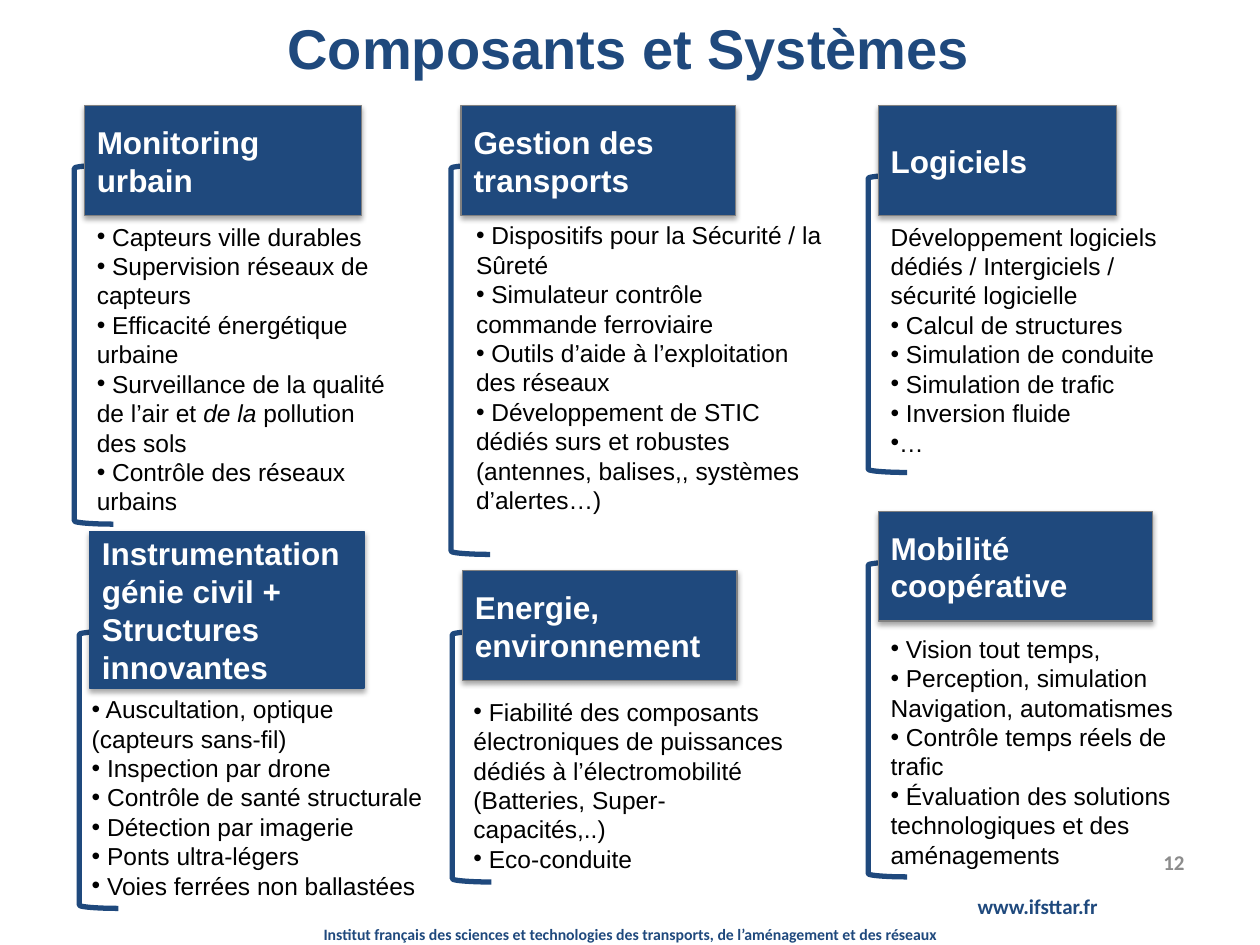
"""Build the slide of components and systems: six headed lists with brackets."""
import lxml.etree
import pptx
import pptx.dml.color
import pptx.enum.shapes
import pptx.enum.text
import pptx.oxml
import pptx.oxml.ns
import pptx.util

NAVY, GREY, WHITE, BLACK = "1F497D", "808080", "FFFFFF", "000000"
SHAPE = pptx.enum.shapes.MSO_SHAPE
ALIGN = pptx.enum.text.PP_ALIGN
MID = pptx.enum.text.MSO_ANCHOR.MIDDLE
TOP = pptx.enum.text.MSO_ANCHOR.TOP
FIT = pptx.enum.text.MSO_AUTO_SIZE.SHAPE_TO_FIT_TEXT
SHADOW = (
    f'<a:effectLst {pptx.oxml.ns.nsdecls("a")}>'
    '<a:outerShdw blurRad="39370" dist="22860" dir="5400000" rotWithShape="0">'
    '<a:srgbClr val="000000"><a:alpha val="35000"/></a:srgbClr>'
    '</a:outerShdw></a:effectLst>'
)

deck = pptx.Presentation()
deck.slide_width = pptx.util.Inches(10)
deck.slide_height = pptx.util.Inches(7.5)
slide = deck.slides.add_slide(deck.slide_layouts[6])
shapes = slide.shapes
col = deck.slide_width / 100
row = deck.slide_height / 75


def tint(code):
    return pptx.dml.color.RGBColor.from_string(code)


def write(shape, lines, size, code, bold=True, face="Arial", align=ALIGN.LEFT, anchor=TOP):
    frame = shape.text_frame
    frame.word_wrap = True
    frame.vertical_anchor = anchor
    frame.text = "\n".join(line.lstrip("•").replace("_", "") for line in lines)
    for para, line in zip(frame.paragraphs, lines):
        para.alignment = align
        if line.startswith("•"):
            props = para._p.get_or_add_pPr()
            props.set("marL", "0")
            props.set("indent", "0")
            font = lxml.etree.SubElement(props, pptx.oxml.ns.qn("a:buFont"))
            font.set("typeface", "Arial")
            mark = lxml.etree.SubElement(props, pptx.oxml.ns.qn("a:buChar"))
            mark.set("char", "•")
        parts = line.lstrip("•").split("_")
        para.runs[0].text = parts[0]
        for part in parts[1:]:
            para.add_run().text = part
        for spot, run in enumerate(para.runs):
            run.font.name = face
            run.font.size = pptx.util.Pt(size)
            run.font.bold = bold
            run.font.italic = spot % 2 == 1
            run.font.color.rgb = tint(code)


labels = [
    ((0, 72.9, 100, 2.5),
     "Institut français des sciences et technologies des transports, de l’aménagement et des réseaux",
     9, NAVY, "Calibri", ALIGN.CENTER, TOP),
    ((76.6, 70.4, 11.8, 3), "www.ifsttar.fr", 12, NAVY, "Calibri", ALIGN.LEFT, TOP),
    ((4.9, -0.2, 90, 7.8), "Composants et Systèmes", 32, NAVY, "Arial", ALIGN.CENTER, MID),
    ((90.2, 66.4, 4.8, 4), "12", 12, "8C8C8C", "Calibri", ALIGN.RIGHT, MID),
]
for (x, y, w, h), words, size, code, face, align, anchor in labels:
    box = shapes.add_textbox(int(x * col), int(y * row), int(w * col), int(h * row))
    write(box, [words], size, code, True, face, align, anchor)

cards = [
    ("Monitoring urbain", (6.7, 8.4, 22, 8.7), GREY, (5.9, 13.1, 28.5), (6.7, 17.1, 26, 26.9),
     ["• Capteurs ville durables", "• Supervision réseaux de capteurs",
      "• Efficacité énergétique urbaine",
      "• Surveillance de la qualité de l’air et _de la _pollution des sols",
      "• Contrôle des réseaux urbains"]),
    ("Gestion des transports", (36.6, 8.4, 21.8, 8.7), GREY, (35.8, 13.1, 30.9), (36.8, 17, 29.6, 24.6),
     ["• Dispositifs pour la Sécurité / la Sûreté",
      "• Simulateur contrôle commande ferroviaire",
      "• Outils d’aide à l’exploitation des réseaux",
      "• Développement de STIC dédiés surs et robustes (antennes, balises,, systèmes d’alertes…)"]),
    ("Logiciels", (69.7, 8.4, 18.9, 8.7), GREY, (68.9, 13.9, 23.6), (69.7, 17.1, 25.2, 19.9),
     ["Développement logiciels dédiés / Intergiciels / sécurité logicielle",
      "• Calcul de structures", "• Simulation de conduite", "• Simulation de trafic",
      "• Inversion fluide", "•…"]),
    ("Instrumentation génie civil + Structures innovantes", (7.1, 42.2, 21.8, 12.4), NAVY,
     (6.3, 50.1, 22), (6.3, 54.6, 28.3, 17.5),
     ["• Auscultation, optique (capteurs sans-fil)", "• Inspection par drone",
      "• Contrôle de santé structurale", "• Détection par imagerie",
      "• Ponts ultra-légers", "• Voies ferrées non ballastées"]),
    ("Energie, environnement", (36.7, 45.3, 21.8, 8.7), GREY, (35.9, 50.1, 19.9), (36.6, 54.8, 27.7, 12.8),
     ["• Fiabilité des composants électroniques de puissances dédiés à l’électromobilité "
      "(Batteries, Super-capacités,..)", "• Eco-conduite"]),
    ("Mobilité coopérative", (69.7, 40.6, 21.8, 8.7), GREY, (68.9, 44.6, 25), (69.7, 49.8, 27.4, 19.9),
     ["• Vision tout temps,", "• Perception, simulation Navigation, automatismes",
      "• Contrôle temps réels de trafic",
      "• Évaluation des solutions technologiques et des aménagements"]),
]
for head, spot, edge, (x, y, h), body, lines in cards:
    hook = shapes.add_shape(SHAPE.LEFT_BRACKET, int(x * col), int(y * row), int(3.1 * col), int(h * row))
    hook.shadow.inherit = False
    hook.fill.background()
    hook.line.color.rgb = tint(NAVY)
    hook.line.width = pptx.util.Pt(3)

for head, (x, y, w, h), edge, hook, body, lines in cards:
    tile = shapes.add_shape(SHAPE.RECTANGLE, int(x * col), int(y * row), int(w * col), int(h * row))
    tile.fill.solid()
    tile.fill.fore_color.rgb = tint(NAVY)
    tile.line.color.rgb = tint(edge)
    tile.line.width = pptx.util.Pt(0.75)
    tile._element.spPr.append(pptx.oxml.parse_xml(SHADOW))
    write(tile, [head], 18, WHITE, anchor=MID)
    x, y, w, h = body
    box = shapes.add_textbox(int(x * col), int(y * row), int(w * col), int(h * row))
    write(box, lines, 14, BLACK, False)
    box.text_frame.auto_size = FIT

deck.save("out.pptx")
